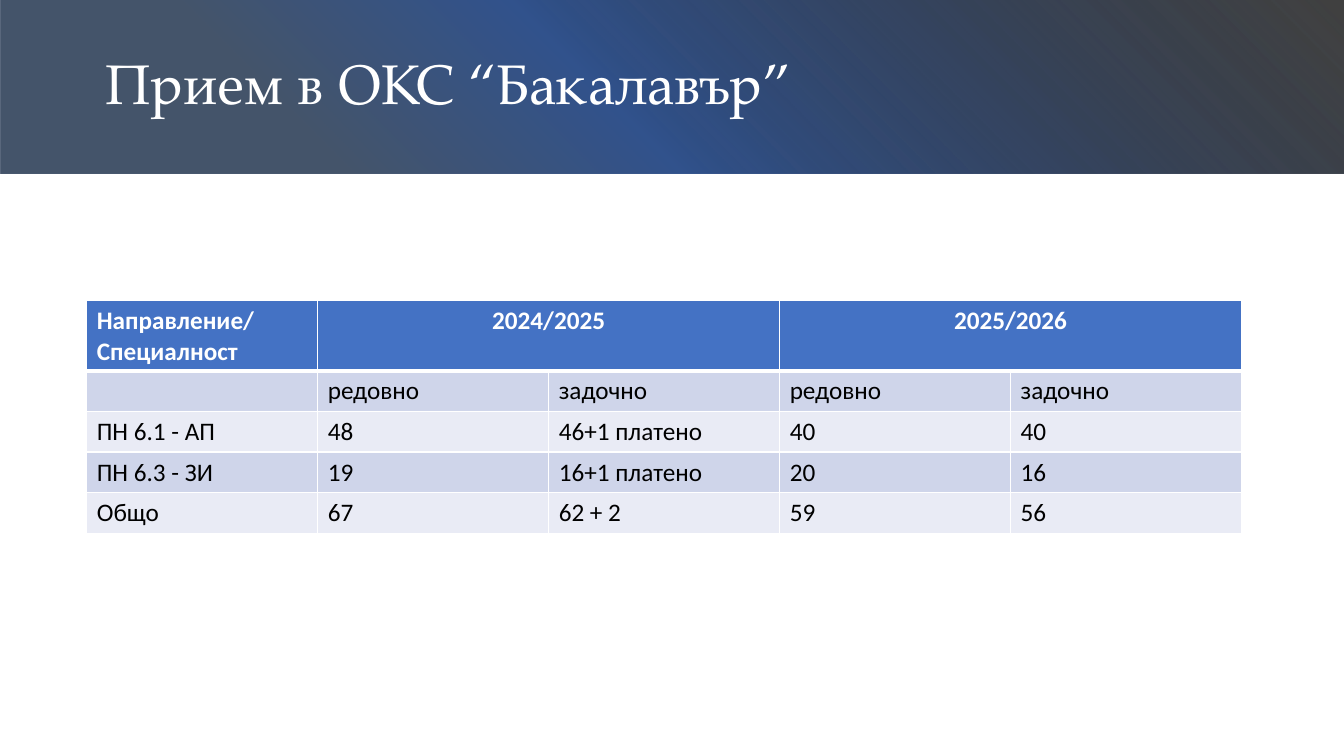
import pptx
import pptx.dml.color
import pptx.enum.shapes
import pptx.enum.text
import pptx.oxml
import pptx.oxml.ns
import pptx.util

Pt = pptx.util.Pt
WIDTH, HEIGHT = 960, 540
BAND_HEIGHT = 124
BLUE, LIGHT, PALE = "4472C4", "CFD5EA", "E9EBF5"
NS = pptx.oxml.ns.nsdecls("a")

ROWS = [
    ["Направление/\nСпециалност", "2024/2025", "", "2025/2026", ""],
    ["", "редовно", "задочно", "редовно", "задочно"],
    ["ПН 6.1 - АП", "48", "46+1 платено", "40", "40"],
    ["ПН 6.3 - ЗИ", "19", "16+1 платено", "20", "16"],
    ["Общо", "67", "62 + 2", "59", "56"],
]


def color(value):
    return pptx.dml.color.RGBColor.from_string(value)


def add_band(s, left, top, width, height):
    # A tall rectangle turned by 90 degrees about the centre of the band
    band = s.shapes.add_shape(
        pptx.enum.shapes.MSO_SHAPE.RECTANGLE,
        Pt(left + (width - height) / 2), Pt(top + (height - width) / 2),
        Pt(height), Pt(width))
    band.rotation = 90
    band.shadow.inherit = False
    band.line.fill.background()

    # Three-stop diagonal gradient: position, colour, opacity in percent
    stops = "".join(
        f'<a:gs pos="{pos * 1000}"><a:srgbClr val="{value}">'
        f'<a:alpha val="{alpha * 1000}"/></a:srgbClr></a:gs>'
        for pos, value, alpha in [(23, "44546A", 100), (45, "31528C", 100), (99, "000000", 74)])
    gradient = pptx.oxml.parse_xml(
        f'<a:gradFill {NS} rotWithShape="1"><a:gsLst>{stops}</a:gsLst>'
        f'<a:lin ang="{225 * 60000}" scaled="0"/></a:gradFill>')
    band.element.spPr.find(pptx.oxml.ns.qn("a:prstGeom")).addnext(gradient)


def add_title(s, left, top, width, height):
    tf = s.shapes.add_textbox(Pt(left), Pt(top), Pt(width), Pt(height)).text_frame
    tf.word_wrap = True
    tf.vertical_anchor = pptx.enum.text.MSO_ANCHOR.MIDDLE
    p = tf.paragraphs[0]
    p.line_spacing = 0.9
    for text, spacing in [("Прием в ", 0), ("ОКС ", -20), ("“Бакалавър”", -10)]:
        r = p.add_run()
        r.text = text
        r.font.size = Pt(40)
        r.font.name = "TeX Gyre Pagella"
        r.font.color.rgb = color("FFFFFF")
        r.font._element.set("spc", str(spacing))


def set_borders(cell, widths):
    tc_pr = cell._tc.get_or_add_tcPr()
    for index, (side, width) in enumerate(widths.items()):
        tc_pr.insert(index, pptx.oxml.parse_xml(
            f'<a:ln{side} {NS} w="{Pt(width)}"><a:solidFill>'
            f'<a:srgbClr val="FFFFFF"/></a:solidFill></a:ln{side}>'))


def format_cell(cell, text, row, col):
    header = row == 0
    cell.text_frame.text = text
    cell.fill.solid()
    cell.fill.fore_color.rgb = color(BLUE if header else LIGHT if row % 2 else PALE)
    set_borders(cell, {"L": 1, "R": 1, "T": 3 if row == 1 else 1, "B": 3 if header else 1})
    for p in cell.text_frame.paragraphs:
        p.font.size = Pt(18)
        if header and col:
            p.alignment = pptx.enum.text.PP_ALIGN.CENTER
        for r in p.runs:
            r.font.size = Pt(18)
            r.font.name = "Calibri"
            r.font.bold = header
            r.font.color.rgb = color("FFFFFF" if header else "000000")


def add_admissions_table(s, left, top, width, header_height, row_height):
    height = header_height + row_height * (len(ROWS) - 1)
    table = s.shapes.add_table(
        len(ROWS), len(ROWS[0]), Pt(left), Pt(top), Pt(width), Pt(height)).table
    for column in table.columns:
        column.width = Pt(width / len(ROWS[0]))
    for i, values in enumerate(ROWS):
        table.rows[i].height = Pt(row_height if i else header_height)
        for j, text in enumerate(values):
            format_cell(table.cell(i, j), text, i, j)
    # Each school year spans two columns
    for j in (1, 3):
        table.cell(0, j).merge(table.cell(0, j + 1))


def main():
    prs = pptx.Presentation()
    prs.slide_width, prs.slide_height = Pt(WIDTH), Pt(HEIGHT)
    s = prs.slides.add_slide(prs.slide_layouts[6])
    add_band(s, 0, 0, WIDTH, BAND_HEIGHT)
    add_title(s, 68.4, 27.4, 790, 69)
    add_admissions_table(s, 62, 214.5, 825, 50.4, 29)
    prs.save("out.pptx")


if __name__ == "__main__":
    main()
